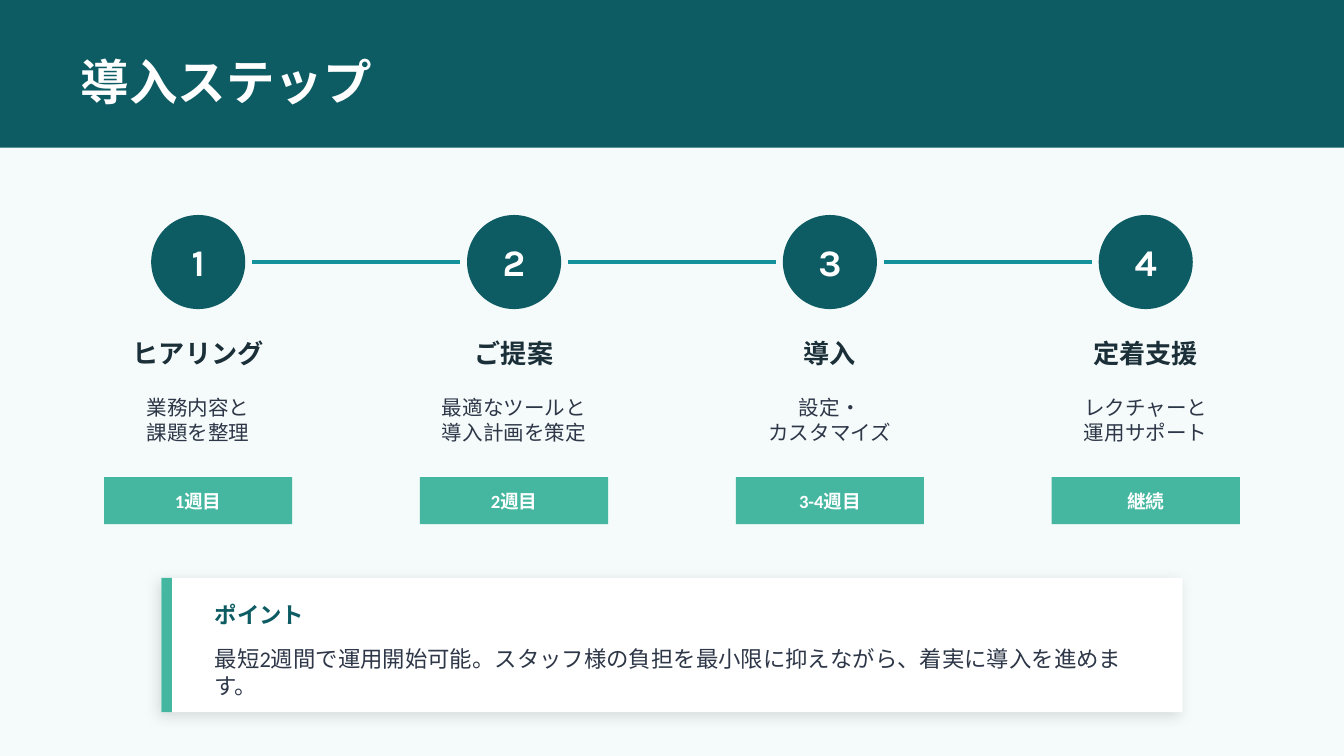
from lxml import etree
from pptx import Presentation
from pptx.dml.color import RGBColor
from pptx.enum.shapes import MSO_CONNECTOR as Link, MSO_SHAPE as Shape
from pptx.enum.text import MSO_ANCHOR as Anchor, PP_ALIGN as Align
from pptx.oxml import parse_xml
from pptx.oxml.ns import nsdecls, qn
from pptx.util import Pt

TITLE = "導入ステップ"
STEPS = [
    ("ヒアリング", "業務内容と\n課題を整理", "1週目"),
    ("ご提案", "最適なツールと\n導入計画を策定", "2週目"),
    ("導入", "設定・\nカスタマイズ", "3-4週目"),
    ("定着支援", "レクチャーと\n運用サポート", "継続"),
]
POINT = "ポイント"
NOTE = "最短2週間で運用開始可能。スタッフ様の負担を最小限に抑えながら、着実に導入を進めます。"

TEAL = RGBColor(0x0D, 0x5C, 0x63)
LINE = RGBColor(0x14, 0x91, 0x9B)
MINT = RGBColor(0x45, 0xB7, 0xA0)
INK = RGBColor(0x1A, 0x2F, 0x38)
GRAY = RGBColor(0x2D, 0x37, 0x48)
PALE = RGBColor(0xF5, 0xFA, 0xFA)
WHITE = RGBColor(0xFF, 0xFF, 0xFF)
HEAD, BODY = "Karla", "Calibri"

PX = 4572  # 200 px to the inch
WIDE, HIGH = 2000, 1125
FIRST, PITCH = 295, 470  # centre of the first step, distance to the next
MID = 390  # height of the circle centres
DISC, GAP = 140, 80  # circle size, distance from circle centre to line end

SHADOW = (
    f'<a:effectLst {nsdecls("a")}>'
    '<a:outerShdw blurRad="101600" dist="38100" dir="8100000" algn="bl" rotWithShape="0">'
    '<a:srgbClr val="000000"><a:alpha val="12000"/></a:srgbClr>'
    "</a:outerShdw></a:effectLst>"
)


def emu(*nums):
    return [n * PX for n in nums]


def write(shape, text, size, color, font, bold=False, align=Align.CENTER, inset=None):
    frame = shape.text_frame
    frame.word_wrap = True
    frame.vertical_anchor = Anchor.MIDDLE
    if inset is not None:
        frame.margin_left = frame.margin_right = inset
        frame.margin_top = frame.margin_bottom = inset
    frame.text = text
    for para in frame.paragraphs:
        para.alignment = align
        for run in para.runs:
            run.font.size = Pt(size)
            run.font.name = font
            run.font.bold = bold
            run.font.color.rgb = color


def block(slide, kind, box, fill):
    shape = slide.shapes.add_shape(kind, *emu(*box))
    shape.shadow.inherit = False
    shape.fill.solid()
    shape.fill.fore_color.rgb = fill
    shape.line.fill.background()
    return shape


def label(slide, box, *style, **more):
    write(slide.shapes.add_textbox(*emu(*box)), *style, **more)


def join(slide, left, right):
    """Draw the line between two neighbouring circles."""
    line = slide.shapes.add_connector(Link.STRAIGHT, *emu(left, MID, right, MID))
    line.line.color.rgb = LINE
    line.line.width = Pt(2)
    etree.SubElement(line._element.spPr, qn("a:effectLst"))


def header(slide):
    band = block(slide, Shape.RECTANGLE, (0, 0, WIDE, 220), TEAL)
    slide.shapes._spTree.insert(2, band._element)  # behind the title
    title = slide.shapes.title
    title.left, title.top, title.width, title.height = emu(120, 70, 1600, 100)
    write(title, TITLE, 26, WHITE, HEAD, bold=True, align=Align.LEFT, inset=0)


def steps(slide):
    for i, (name, text, week) in enumerate(STEPS):
        mid = FIRST + i * PITCH
        disc = block(slide, Shape.OVAL, (mid - DISC // 2, MID - DISC // 2, DISC, DISC), TEAL)
        write(disc, str(i + 1), 20, WHITE, HEAD, bold=True, inset=0)
        if i < len(STEPS) - 1:
            join(slide, mid + GAP, mid + PITCH - GAP)
        label(slide, (mid - 200, 490, 400, 70), name, 14, INK, HEAD, bold=True)
        label(slide, (mid - 200, 560, 400, 130), text, 11, GRAY, BODY)
        tag = block(slide, Shape.RECTANGLE, (mid - 140, 710, 280, 70), MINT)
        write(tag, week, 10, WHITE, BODY, bold=True)


def callout(slide):
    card = block(slide, Shape.RECTANGLE, (240, 860, 1520, 200), WHITE)
    props = card._element.spPr
    props.replace(props.find(qn("a:effectLst")), parse_xml(SHADOW))
    block(slide, Shape.RECTANGLE, (240, 860, 16, 200), MINT)
    label(slide, (300, 880, 300, 70), POINT, 12, TEAL, HEAD, bold=True, align=Align.LEFT)
    label(slide, (300, 950, 1400, 100), NOTE, 12, GRAY, BODY, align=Align.LEFT)


def main():
    deck = Presentation()
    deck.slide_width, deck.slide_height = emu(WIDE, HIGH)
    slide = deck.slides.add_slide(deck.slide_layouts[5])
    back = slide.background.fill
    back.solid()
    back.fore_color.rgb = PALE
    header(slide)
    steps(slide)
    callout(slide)
    deck.save("out.pptx")


if __name__ == "__main__":
    main()
